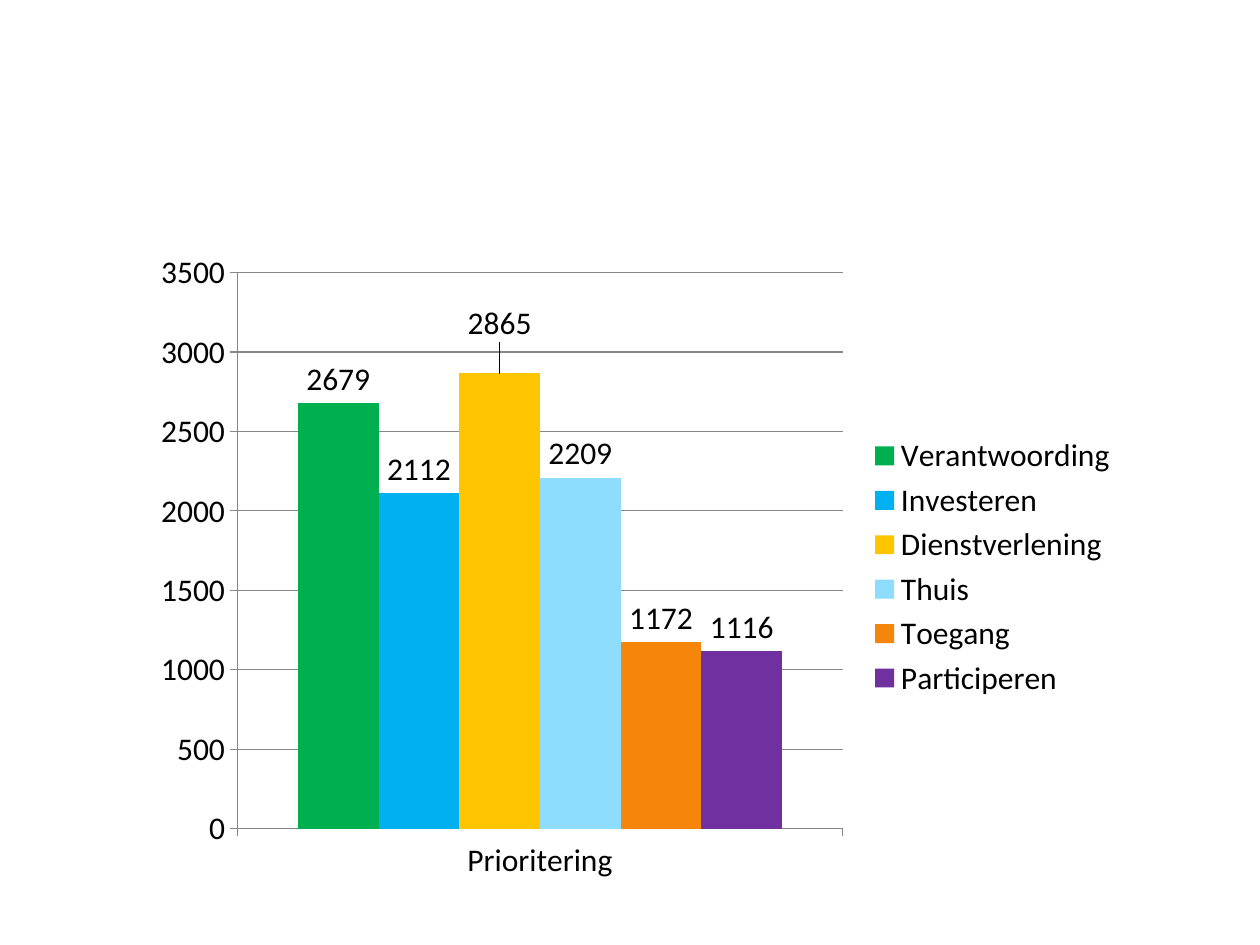
"""Build a slide with a column chart of priority scores per theme."""
from dataclasses import dataclass

from lxml.etree import SubElement
from pptx import Presentation
from pptx.chart.data import CategoryChartData
from pptx.chart.series import BarSeries
from pptx.dml.color import RGBColor
from pptx.enum.chart import XL_CHART_TYPE as ChartType
from pptx.enum.chart import XL_LABEL_POSITION as LabelPos
from pptx.enum.chart import XL_LEGEND_POSITION as LegendPos
from pptx.enum.chart import XL_TICK_MARK as Tick
from pptx.oxml.ns import qn
from pptx.util import Pt


@dataclass(frozen=True)
class Theme:
    """Font, sizes and colours of the chart."""
    font: str = "Calibri"
    size: int = 18
    text: str = "000000"
    line: str = "878787"
    line_width: float = 0.75


@dataclass(frozen=True)
class Priority:
    """One column: its name, score and colour."""
    name: str
    score: int
    color: str
    label_shift: float = 0


THEME = Theme()
PRIORITIES = [
    Priority("Verantwoording", 2679, "00B050"),
    Priority("Investeren", 2112, "00B0F0"),
    Priority("Dienstverlening", 2865, "FFC600", label_shift=-0.04),
    Priority("Thuis", 2209, "8EDDFF"),
    Priority("Toegang", 1172, "F5860B"),
    Priority("Participeren", 1116, "7030A0"),
]


def style_font(font) -> None:
    """Apply the theme to a font."""
    font.name = THEME.font
    font.size = Pt(THEME.size)
    font.color.rgb = RGBColor.from_string(THEME.text)


def style_line(line) -> None:
    """Apply the theme to an axis or grid line."""
    line.color.rgb = RGBColor.from_string(THEME.line)
    line.width = Pt(THEME.line_width)


def set_layout(parent, index: int, **values) -> None:
    """Give a chart part a manual layout at a child index."""
    for old in parent.findall(qn("c:layout")):
        parent.remove(old)
    layout = SubElement(parent, qn("c:layout"))
    manual = SubElement(layout, qn("c:manualLayout"))
    for name, value in values.items():
        SubElement(manual, qn(f"c:{name}")).set("val", str(value))
    parent.insert(index, layout)


def style_series(s: BarSeries, priority: Priority) -> None:
    """Colour a column and place its value label."""
    s.format.fill.solid()
    s.format.fill.fore_color.rgb = RGBColor.from_string(priority.color)
    s.invert_if_negative = False
    labels = s.data_labels
    labels.show_value = True
    labels.position = LabelPos.OUTSIDE_END
    style_font(labels.font)
    if priority.label_shift:
        label = s.points[0].data_label
        label.position = LabelPos.OUTSIDE_END
        style_font(label.font)
        node = labels._element.find(qn("c:dLbl"))
        set_layout(node, 1, x=0, y=priority.label_shift)


def add_priority_chart(slide) -> None:
    """Draw the column chart with its axes and legend."""
    data = CategoryChartData()
    data.categories = ["Prioritering"]
    for priority in PRIORITIES:
        data.add_series(priority.name, [priority.score])
    chart = slide.shapes.add_chart(
        ChartType.COLUMN_CLUSTERED, Pt(79), Pt(137), Pt(567), Pt(374), data
    ).chart
    style_font(chart.font)
    chart.has_title = False
    chart.has_legend = True
    chart.legend.position = LegendPos.RIGHT
    chart.legend.include_in_layout = False
    style_font(chart.legend.font)

    for axis in (chart.category_axis, chart.value_axis):
        axis.major_tick_mark = Tick.OUTSIDE
        axis.minor_tick_mark = Tick.NONE
        style_line(axis.format.line)
        style_font(axis.tick_labels.font)
    scale = chart.value_axis
    scale.minimum_scale, scale.maximum_scale, scale.major_unit = 0, 3500, 500
    scale.has_major_gridlines = True
    style_line(scale.major_gridlines.format.line)

    plot = chart.plots[0]
    plot.gap_width = 150
    plot.overlap = 0
    plot.vary_by_categories = False
    for s, priority in zip(plot.series, PRIORITIES):
        style_series(s, priority)
    area = chart.element.find(f".//{qn('c:plotArea')}")
    set_layout(area, 0, layoutTarget="inner", xMode="edge", yMode="edge",
               x=0.1, y=0.05, w=0.61, h=0.85)


def main() -> None:
    """Create and save the presentation."""
    prs = Presentation()
    prs.slide_width, prs.slide_height = Pt(720), Pt(540)
    add_priority_chart(prs.slides.add_slide(prs.slide_layouts[6]))
    prs.save("out.pptx")


if __name__ == "__main__":
    main()
